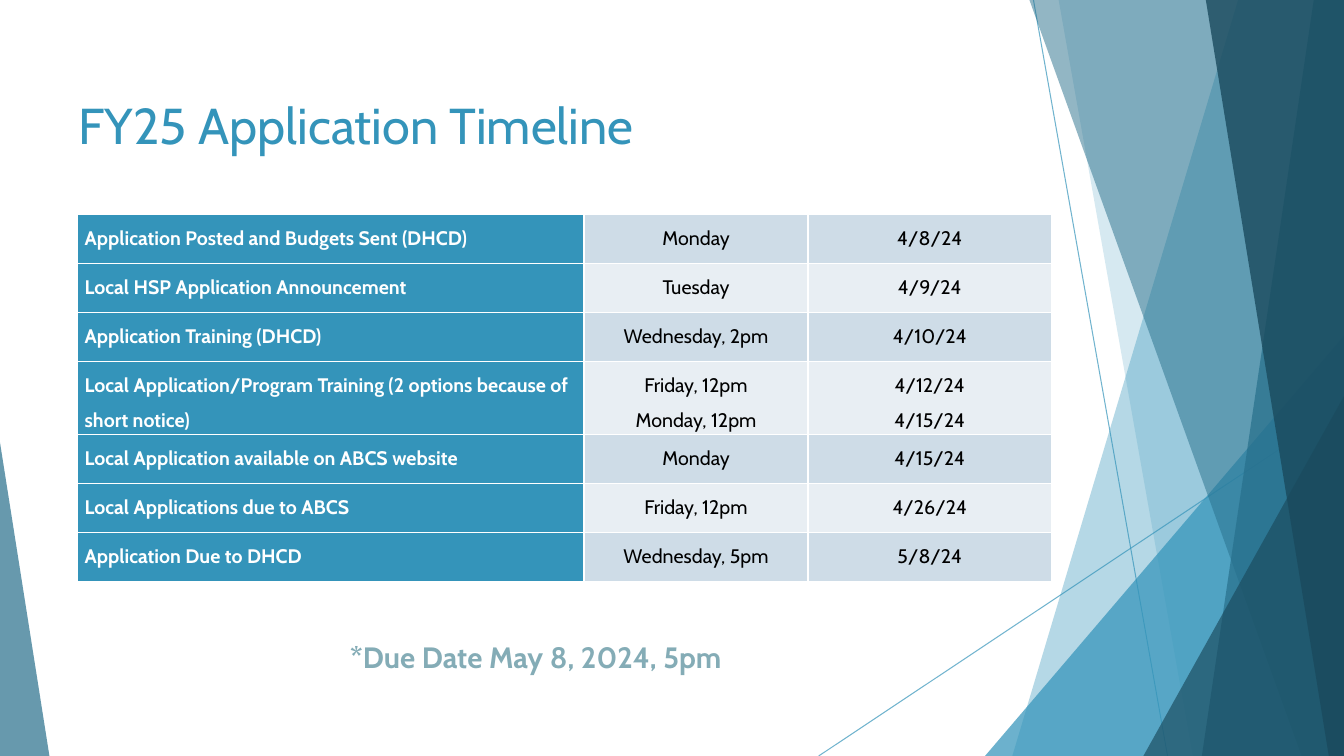
from dataclasses import dataclass

from lxml import etree
from pptx import Presentation, util as u
from pptx.dml.color import RGBColor
from pptx.enum import shapes as sh, text as tx
from pptx.oxml.ns import qn


@dataclass(frozen=True)
class Theme:
    """Colours, font and type sizes of the slide."""
    blue: str = "3494BA"
    mid: str = "276F8B"
    deep: str = "1A4A5D"
    soft: str = "84ACB6"
    white: str = "FFFFFF"
    black: str = "000000"
    bands: tuple = ("CEDCE7", "E8EEF3")
    font: str = "Cabin"
    head: int = 36
    note: int = 21
    body: int = 14


T = Theme()
WIDE, HIGH = 13.33, 7.5
STEPS = [
    ("Application Posted and Budgets Sent (DHCD)", "Monday", "4/8/24"),
    ("Local HSP Application Announcement", "Tuesday", "4/9/24"),
    ("Application Training (DHCD)", "Wednesday, 2pm", "4/10/24"),
    ("Local Application/Program Training (2 options because of short notice)",
     "Friday, 12pm\nMonday, 12pm", "4/12/24\n4/15/24"),
    ("Local Application available on ABCS website", "Monday", "4/15/24"),
    ("Local Applications due to ABCS", "Friday, 12pm", "4/26/24"),
    ("Application Due to DHCD", "Wednesday, 5pm", "5/8/24"),
]


def assign(item, **vals):
    """Set each named attribute on an object."""
    for key, val in vals.items():
        setattr(item, key, val)


def tint(fill, color, share):
    """Give a solid fill a colour and an opacity in percent."""
    fill.solid()
    fill.fore_color.rgb = RGBColor.from_string(color)
    node = fill._xPr.find(qn("a:solidFill"))[0]
    etree.SubElement(node, qn("a:alpha"), val=str(share * 1000))


def paint(shape, color, share):
    """Fill a shape and drop its outline and shadow."""
    tint(shape.fill, color, share)
    shape.line.fill.background()
    shape.shadow.inherit = False


def write(frame, words, size, color, bold=False, gap=1.0, align=tx.PP_ALIGN.LEFT):
    """Write one styled paragraph for each line of words."""
    frame.text = words
    for para in frame.paragraphs:
        assign(para, alignment=align, line_spacing=gap)
        font = para.runs[0].font
        assign(font, name=T.font, size=u.Pt(size), bold=bold)
        font.color.rgb = RGBColor.from_string(color)


def ray(slide, box, start, end):
    """Draw a thin line between two points of a box."""
    x, y = box[:2]
    ends = [u.Inches(n) for n in (x + start[0], y + start[1], x + end[0], y + end[1])]
    line = slide.shapes.add_connector(sh.MSO_CONNECTOR.STRAIGHT, *ends)
    line.line.width = u.Pt(0.75)
    tint(line.line.fill, T.blue, 70)
    etree.SubElement(line._element.spPr, qn("a:effectLst"))


def band(slide, box, top, foot, color, share):
    """Fill from a slanted edge to the right side of a box."""
    x, y, w, h = box
    pts = [(u.Inches(x + a), u.Inches(y + b))
           for a, b in ((top, 0), (w, 0), (w, h), (foot, h))]
    form = slide.shapes.build_freeform(*pts[0], scale=1.0)
    form.add_line_segments(pts[1:], close=True)
    paint(form.convert_to_shape(), color, share)


def wedge(slide, box, peak, color, share):
    """Fill a box with a triangle whose tip sits at a share of its width."""
    tri = slide.shapes.add_shape(sh.MSO_SHAPE.ISOSCELES_TRIANGLE, *map(u.Inches, box))
    tri.adjustments[0] = peak
    paint(tri, color, share)


def corner(slide, box, w, h, color, share):
    """Set a right triangle in the lower right corner of a box."""
    x, y = box[0] + box[2] - w, box[1] + box[3] - h
    wedge(slide, (x, y, w, h), 1, color, share)


def facets(slide, box):
    """Layer the see-through facets from back to front."""
    w, h = box[2:]
    ray(slide, box, (2.13, 0), (3.46, h))
    ray(slide, box, (w, 4.03), (0, h))
    for draw, *spec in (
        (band, 4.16, 1.92, T.blue, 36),
        (band, 2.38, 3.71, T.blue, 20),
        (corner, 3.56, 4.17, T.blue, 72),
        (band, 2.09, 4.79, T.mid, 50),
        (band, 4.91, 3.8, T.mid, 70),
        (band, 3.84, 5.06, T.deep, 80),
        (corner, 1.99, 3.57, T.deep, 66),
    ):
        draw(slide, box, *spec)


def label(slide, box, pad, words, size, color, bold=False):
    """Place a text box with left and top insets."""
    frame = slide.shapes.add_textbox(*map(u.Inches, box)).text_frame
    side, top = map(u.Inches, pad)
    assign(frame, word_wrap=True, vertical_anchor=tx.MSO_ANCHOR.TOP,
           margin_left=side, margin_right=side, margin_top=top, margin_bottom=0)
    write(frame, words, size, color, bold)


def edge(cell):
    """Rule all four sides of a cell in white."""
    props = cell._tc.get_or_add_tcPr()
    for spot, side in enumerate(("lnL", "lnR", "lnT", "lnB")):
        line = etree.Element(qn("a:" + side), w=str(u.Pt(1)))
        fill = etree.SubElement(line, qn("a:solidFill"))
        etree.SubElement(fill, qn("a:srgbClr"), val=T.white)
        props.insert(spot, line)


def dates(slide, box):
    """Build the timeline table with one taller row."""
    w, h = box[2:]
    grid = slide.shapes.add_table(len(STEPS), 3, *map(u.Inches, box)).table
    for col, share in zip(grid.columns, (0.52, 0.23, 0.25)):
        col.width = u.Inches(w * share)
    tall = 0.73
    each = (h - tall) / (len(STEPS) - 1)
    for r, step in enumerate(STEPS):
        grid.rows[r].height = u.Inches(tall if "\n" in step[1] else each)
        for c, words in enumerate(step):
            cell = grid.cell(r, c)
            assign(cell, margin_left=u.Inches(0.07), margin_right=u.Inches(0.07),
                   margin_top=0, margin_bottom=0)
            lead = c == 0
            cell.fill.solid()
            cell.fill.fore_color.rgb = RGBColor.from_string(
                T.blue if lead else T.bands[r % 2])
            write(cell.text_frame, words, T.body, T.white if lead else T.black, lead,
                  1.5, tx.PP_ALIGN.LEFT if lead else tx.PP_ALIGN.CENTER)
            edge(cell)


def main():
    """Build and save the slide."""
    deck = Presentation()
    assign(deck, slide_width=u.Inches(WIDE), slide_height=u.Inches(HIGH))
    slide = deck.slides.add_slide(deck.slide_layouts[6])
    facets(slide, (8.12, 0, WIDE - 8.12, HIGH))
    wedge(slide, (0, 4.39, 0.49, HIGH - 4.39), 0, T.mid, 70)
    label(slide, (0.68, 0.93, 9.76, 0.88), (0.1, 0),
          "FY25 Application Timeline", T.head, T.blue)
    label(slide, (3.34, 5.93, 4.44, 1.3), (0.13, 0.48),
          "*Due Date May 8, 2024, 5pm", T.note, T.soft, True)
    dates(slide, (0.77, 2.13, 9.66, 3.64))
    deck.save("out.pptx")


if __name__ == "__main__":
    main()
